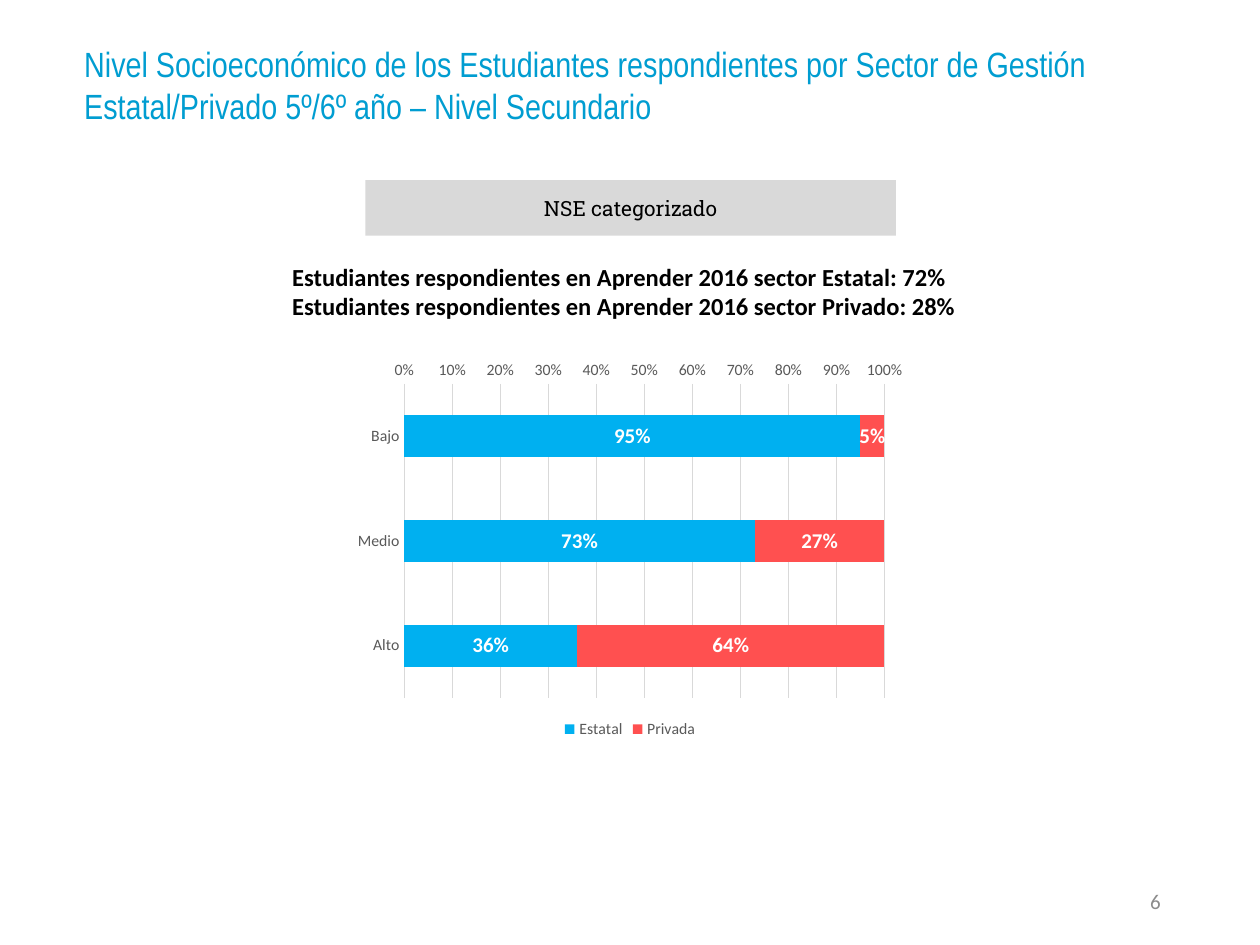
"""Build the slide on students' socioeconomic level by school sector."""
from pptx import Presentation
from pptx import util as u
from pptx.chart import data
from pptx.dml import color
from pptx.enum import chart as ch, shapes, text


def paint(obj, tint):
    """Give a fill or a font a solid hex colour."""
    if hasattr(obj, "solid"):
        obj.solid()
        obj.fore_color.rgb = color.RGBColor.from_string(tint)
    else:
        obj.color.rgb = color.RGBColor.from_string(tint)


def write(frame, lines, face, size, tint, align, bold=False):
    """Write one run per paragraph into a text frame."""
    frame.word_wrap = True
    for i, line in enumerate(lines):
        para = frame.add_paragraph() if i else frame.paragraphs[0]
        para.alignment = align
        run = para.add_run()
        run.text = line
        run.font.name = face
        run.font.size = u.Pt(size)
        run.font.bold = bold
        paint(run.font, tint)


deck = Presentation()
deck.slide_width, deck.slide_height = u.Inches(10), u.Inches(7.5)
slide = deck.slides.add_slide(deck.slide_layouts[6])
al = text.PP_ALIGN
mid = text.MSO_ANCHOR.MIDDLE

title = slide.shapes.add_textbox(u.Inches(0.57), u.Inches(0.29), u.Inches(9.3), u.Inches(0.77))
write(title.text_frame,
      ["Nivel Socioeconómico de los Estudiantes respondientes por Sector de Gestión "
       "Estatal/Privado 5º/6º año – Nivel Secundario"],
      "Arial Narrow", 20, "009DD1", al.LEFT)

band = slide.shapes.add_shape(shapes.MSO_SHAPE.RECTANGLE, u.Inches(2.9), u.Inches(1.43),
                              u.Inches(4.21), u.Inches(0.44))
band.shadow.inherit = False
paint(band.fill, "D9D9D9")
band.line.fill.background()
band.text_frame.vertical_anchor = mid
write(band.text_frame, ["NSE categorizado"], "Roboto Slab", 12, "000000", al.CENTER)

page = slide.shapes.add_textbox(u.Inches(7.06), u.Inches(6.95), u.Inches(2.25), u.Inches(0.4))
page.text_frame.vertical_anchor = mid
write(page.text_frame, ["6"], "Calibri", 12, "8C8C8C", al.RIGHT)

table = data.CategoryChartData(number_format="0%")
table.categories = ["Bajo", "Medio", "Alto"]
table.add_series("Estatal", [0.95, 0.73, 0.36])
table.add_series("Privada", [0.05, 0.27, 0.64])
chart = slide.shapes.add_chart(ch.XL_CHART_TYPE.BAR_STACKED_100, u.Inches(2.75), u.Inches(2.8),
                               u.Inches(4.5), u.Inches(3.1), table).chart
chart.has_title = False
chart.font.name = "Calibri"
chart.font.size = u.Pt(10)
chart.has_legend = True
chart.legend.position = ch.XL_LEGEND_POSITION.BOTTOM
chart.legend.include_in_layout = False

cat, val = chart.category_axis, chart.value_axis
for axis in (cat, val):
    axis.major_tick_mark = axis.minor_tick_mark = ch.XL_TICK_MARK.NONE
for font in (cat.tick_labels.font, val.tick_labels.font, chart.legend.font):
    font.name = "Calibri"
    font.size = u.Pt(9)
    paint(font, "595959")
cat.reverse_order = True
val.maximum_scale, val.major_unit = 1, 0.1
val.tick_labels.number_format = "0%"
val.tick_labels.number_format_is_linked = False
val.format.line.fill.background()
for line in (cat.format.line, val.major_gridlines.format.line):
    paint(line.fill, "D9D9D9")
    line.width = u.Pt(0.75)

plot = chart.plots[0]
plot.gap_width, plot.overlap = 150, 100
plot.vary_by_categories = False
for bar, tint in zip(plot.series, ("00B0F0", "FF5050")):
    paint(bar.format.fill, tint)
    tags = bar.data_labels
    tags.show_value = True
    tags.number_format = "0%"
    tags.number_format_is_linked = False
    tags.font.name = "Calibri"
    tags.font.size = u.Pt(12)
    tags.font.bold = True
    paint(tags.font, "FFFFFF")

share = slide.shapes.add_textbox(u.Inches(2.22), u.Inches(2.03), u.Inches(5.78), u.Inches(0.57))
write(share.text_frame,
      [f"Estudiantes respondientes en Aprender 2016 sector {name}: {part}%"
       for name, part in (("Estatal", 72), ("Privado", 28))],
      "Calibri", 14, "000000", al.JUSTIFY, True)

deck.save("out.pptx")
